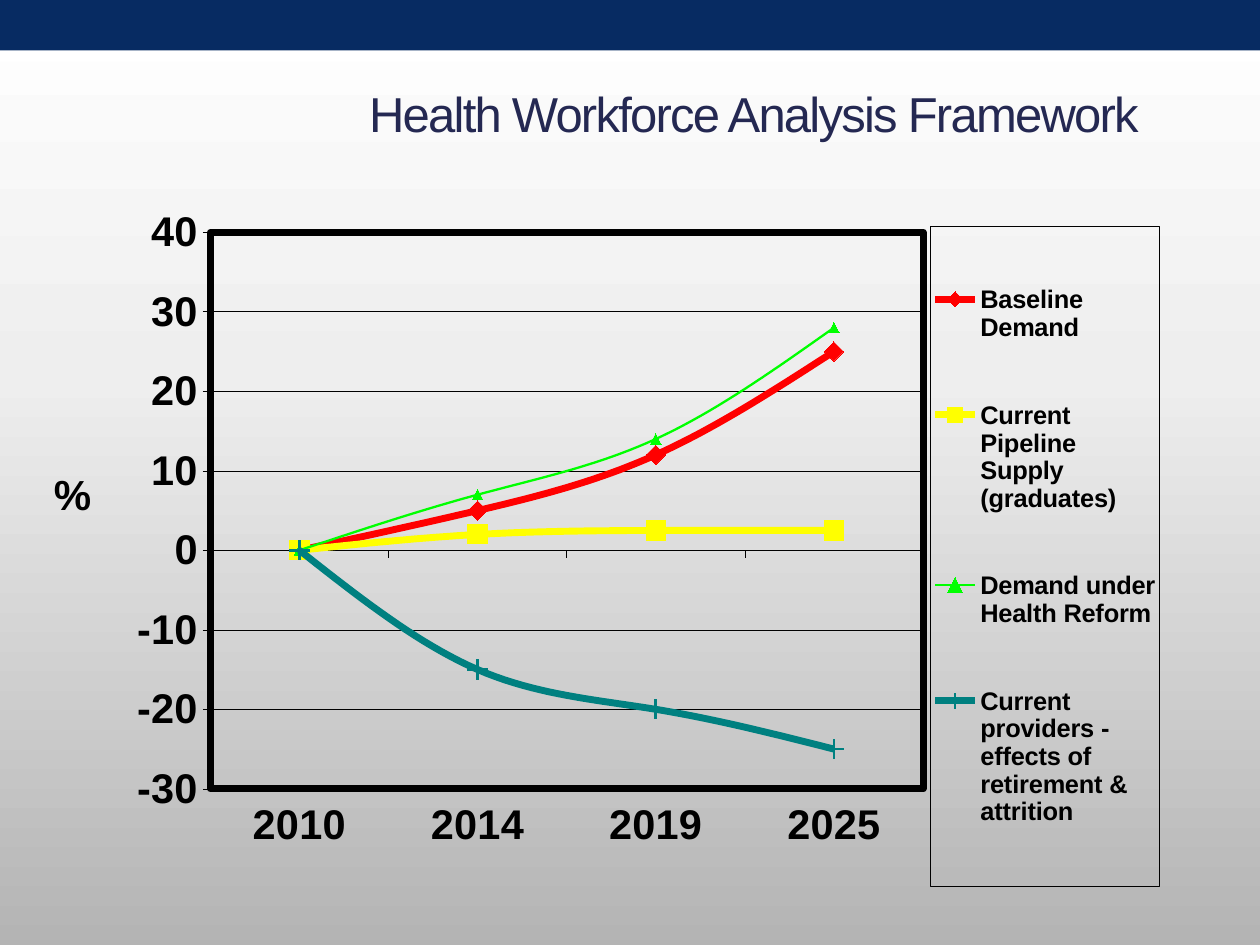
from dataclasses import dataclass

from lxml import etree
from pptx import Presentation
from pptx import util as u
from pptx.chart.data import CategoryChartData
from pptx.dml.color import RGBColor
from pptx.enum import chart as charts, shapes, text
from pptx.oxml import parse_xml
from pptx.oxml import ns

WIDTH, HEIGHT = 10, 7.5
FONT = "Arial"
COLORS = {
    "banner": "072B62", "strip": "FFFFFF", "title": "242852", "ink": "000000",
    "baseline": "FF0000", "pipeline": "FFFF00", "reform": "00FF00", "providers": "008080",
}
BACKGROUND_STOPS = [(0, "FFFFFF"), (40, "EEEEEE"), (100, "B4B4B4")]
YEARS = ["2010", "2014", "2019", "2025"]
MARKER = charts.XL_MARKER_STYLE


@dataclass
class Trend:
    name: str
    values: tuple[float, ...]
    color: str
    marker: MARKER
    line_width: float = 3.94
    marker_size: int = 11


TRENDS = [
    Trend("Baseline Demand", (0, 5, 12, 25), "baseline", MARKER.DIAMOND),
    Trend("Current Pipeline Supply (graduates)", (0, 2, 2.5, 2.5), "pipeline", MARKER.SQUARE),
    Trend("Demand under Health Reform", (0, 7, 14, 28), "reform", MARKER.TRIANGLE, 1.31, 6),
    Trend("Current providers - effects of retirement & attrition",
          (0, -15, -20, -25), "providers", MARKER.PLUS),
]


def rgb(name: str) -> RGBColor:
    return RGBColor.from_string(COLORS[name])


def box(left: float, top: float, width: float, height: float) -> list[int]:
    return [u.Inches(length) for length in (left, top, width, height)]


def style_font(font, size: float, color: str = "ink", bold: bool = True) -> None:
    font.name, font.size, font.bold = FONT, u.Pt(size), bold
    font.color.rgb = rgb(color)


def style_line(line, color: str, width: float) -> None:
    line.color.rgb = rgb(color)
    line.width = u.Pt(width)


def paint_background(slide) -> None:
    fill = slide.background.fill
    fill.gradient()
    fill.gradient_angle = 270
    stops = slide.background._cSld.find(".//" + ns.qn("a:gsLst"))
    for stop in list(stops):
        stops.remove(stop)
    for position, color in BACKGROUND_STOPS:
        stop = etree.SubElement(stops, ns.qn("a:gs"), pos=str(position * 1000))
        etree.SubElement(stop, ns.qn("a:srgbClr"), val=color)


def add_band(slide, top: float, height: float, color: str) -> None:
    band = slide.shapes.add_shape(shapes.MSO_SHAPE.RECTANGLE, *box(0, top, WIDTH, height))
    band.shadow.inherit = False
    band.fill.solid()
    band.fill.fore_color.rgb = rgb(color)
    band.line.fill.background()


def manual_layout(x: float, y: float, width: float, height: float, inner: bool = False):
    """Place a chart part by shares of the chart's size."""
    target = '<c:layoutTarget val="inner"/>' if inner else ""
    return parse_xml(
        f'<c:layout {ns.nsdecls("c")}><c:manualLayout>{target}'
        '<c:xMode val="edge"/><c:yMode val="edge"/>'
        f'<c:x val="{x}"/><c:y val="{y}"/><c:w val="{width}"/><c:h val="{height}"/>'
        "</c:manualLayout></c:layout>")


def frame(width: float):
    """Unfilled border for a chart part."""
    return parse_xml(
        f'<c:spPr {ns.nsdecls("c", "a")}><a:noFill/><a:ln w="{u.Pt(width)}"><a:solidFill>'
        f'<a:srgbClr val="{COLORS["ink"]}"/></a:solidFill></a:ln></c:spPr>')


def style_axis(axis) -> None:
    axis.major_tick_mark = charts.XL_TICK_MARK.OUTSIDE
    axis.minor_tick_mark = charts.XL_TICK_MARK.NONE
    style_font(axis.tick_labels.font, 23.7)
    style_line(axis.format.line, "ink", 0.33)


def style_series(series, trend: Trend) -> None:
    series.smooth = True
    style_line(series.format.line, trend.color, trend.line_width)
    marker = series.marker
    marker.style, marker.size = trend.marker, trend.marker_size
    if trend.marker == MARKER.PLUS:
        marker.format.fill.background()
    else:
        marker.format.fill.solid()
        marker.format.fill.fore_color.rgb = rgb(trend.color)
    style_line(marker.format.line, trend.color, 0.75)


def add_trend_chart(slide) -> None:
    data = CategoryChartData()
    data.categories = YEARS
    for trend in TRENDS:
        data.add_series(trend.name, trend.values)
    chart = slide.shapes.add_chart(
        charts.XL_CHART_TYPE.LINE_MARKERS, *box(0.64, 1.39, 8.65, 5.82), data).chart
    chart.has_title = False
    style_font(chart.font, 23.7)
    chart.plots[0].vary_by_categories = False
    for series, trend in zip(chart.plots[0].series, TRENDS):
        style_series(series, trend)

    # Axes
    style_axis(chart.category_axis)
    chart.category_axis.tick_label_position = charts.XL_TICK_LABEL_POSITION.LOW
    values = chart.value_axis
    style_axis(values)
    values.minimum_scale, values.maximum_scale, values.major_unit = -30, 40, 10
    values.has_major_gridlines = True
    style_line(values.major_gridlines.format.line, "ink", 0.33)

    # Plot area
    area = chart._chartSpace.chart.plotArea
    for layout in area.findall(ns.qn("c:layout")):
        area.remove(layout)
    area.insert(0, manual_layout(0.119, 0.078, 0.654, 0.759, inner=True))
    area.append(frame(4))

    # Legend
    chart.has_legend = True
    legend = chart.legend
    legend.position = charts.XL_LEGEND_POSITION.RIGHT
    legend.include_in_layout = False
    style_font(legend.font, 14.5)
    element = legend._element
    for layout in element.findall(ns.qn("c:layout")):
        element.remove(layout)
    element.find(ns.qn("c:legendPos")).addnext(manual_layout(0.78, 0.07, 0.21, 0.9))
    element.find(ns.qn("c:overlay")).addnext(frame(0.33))


def fill_title(slide) -> None:
    title = slide.shapes.title
    title.left, title.top, title.width, title.height = box(2.83, 0.25, 6.58, 1.3)
    title.text_frame.text = "Health Workforce Analysis Framework"
    title.text_frame.vertical_anchor = text.MSO_ANCHOR.MIDDLE
    paragraph = title.text_frame.paragraphs[0]
    paragraph.alignment = text.PP_ALIGN.LEFT
    run = paragraph.runs[0]
    style_font(run.font, 28, "title", bold=False)
    run.font._element.set("spc", "-100")


def add_unit_label(slide) -> None:
    label = slide.shapes.add_textbox(*box(0.33, 3.67, 0.83, 0.5)).text_frame
    label.word_wrap = True
    label.auto_size = text.MSO_AUTO_SIZE.SHAPE_TO_FIT_TEXT
    label.text = "%"
    style_font(label.paragraphs[0].runs[0].font, 24)


def main() -> None:
    presentation = Presentation()
    presentation.slide_width, presentation.slide_height = u.Inches(WIDTH), u.Inches(HEIGHT)
    slide = presentation.slides.add_slide(presentation.slide_layouts.get_by_name("Title Only"))
    paint_background(slide)
    add_band(slide, 0.24, 0.25, "strip")
    add_band(slide, 0, 0.4, "banner")
    add_trend_chart(slide)
    fill_title(slide)
    add_unit_label(slide)
    presentation.save("out.pptx")


if __name__ == "__main__":
    main()
